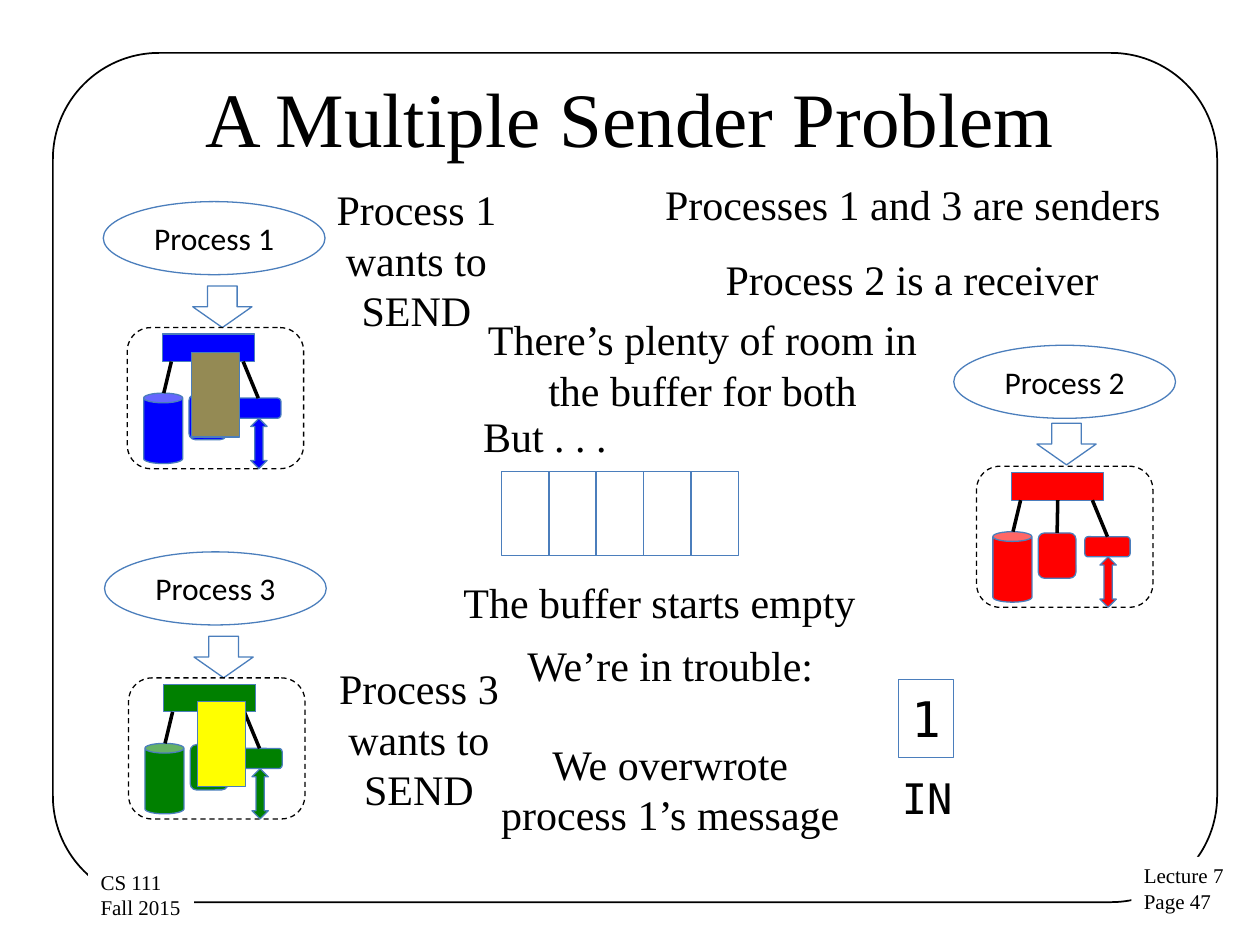
from lxml import etree
from pptx import Presentation
from pptx.dml.color import RGBColor
from pptx.enum.dml import MSO_LINE
from pptx.enum.shapes import MSO_CONNECTOR, MSO_SHAPE
from pptx.enum.text import MSO_ANCHOR, MSO_AUTO_SIZE, PP_ALIGN
from pptx.oxml.ns import qn
from pptx.util import Inches, Pt

RECT = MSO_SHAPE.RECTANGLE
ROUNDED = MSO_SHAPE.ROUNDED_RECTANGLE
LEFT, CENTER = PP_ALIGN.LEFT, PP_ALIGN.CENTER
TOP, MIDDLE = MSO_ANCHOR.TOP, MSO_ANCHOR.MIDDLE
TITLE_ONLY = 5
BOTTOM_SIDE, TOP_SIDE = 2, 0


def color(value):
    return RGBColor.from_string(value)


class SlideBuilder:
    serif, sans, mono = "Times New Roman", "Calibri", "DejaVu Sans Mono"
    black, white, outline = "000000", "FFFFFF", "4B7EBC"

    def __init__(self, slide):
        self.slide = slide

    def set_text(self, shape, text, size, font, align=CENTER, anchor=MIDDLE, wrap=True):
        frame = shape.text_frame
        frame.text = text
        frame.word_wrap = wrap
        frame.vertical_anchor = anchor
        for para in frame.paragraphs:
            para.alignment = align
            for span in para.runs:
                span.font.size = Pt(size)
                span.font.name = font
                span.font.color.rgb = color(self.black)

    def title(self, text, *place):
        title = self.slide.shapes.title
        title.left, title.top, title.width, title.height = map(Inches, place)
        self.set_text(title, text, 44, self.serif)

    def shape(self, kind, left, top, width, height, fill=None, line=outline,
              weight=0.75, group=None):
        owner = group or self.slide
        shape = owner.shapes.add_shape(kind, *map(Inches, (left, top, width, height)))
        shape.shadow.inherit = False
        if fill:
            shape.fill.solid()
            shape.fill.fore_color.rgb = color(fill)
        else:
            shape.fill.background()
        if line:
            shape.line.color.rgb = color(line)
            shape.line.width = Pt(weight)
        else:
            shape.line.fill.background()
        return shape

    def text(self, text, left, top, width, height, align=CENTER, wrap=True, font=serif):
        box = self.slide.shapes.add_textbox(*map(Inches, (left, top, width, height)))
        self.set_text(box, text, 24, font, align, TOP, wrap)
        box.text_frame.auto_size = MSO_AUTO_SIZE.SHAPE_TO_FIT_TEXT

    def line(self, *ends):
        line = self.slide.shapes.add_connector(MSO_CONNECTOR.STRAIGHT, *map(Inches, ends))
        line.line.color.rgb = color(self.black)
        line.line.width = Pt(2)
        etree.SubElement(line.element.spPr, qn("a:effectLst"))
        return line

    def frame(self):
        frame = self.shape(ROUNDED, 0.42, 0.42, 9.24, 6.74, line=self.black, weight=1)
        frame.adjustments[0] = 0.125

    def footer(self, text, left, top):
        box = self.shape(RECT, left, top, 0.84, 0.51, self.white, None)
        self.set_text(box, text, 12, self.serif, LEFT, TOP, False)

    def buffer(self, left, top, count, step):
        group = self.slide.shapes.add_group_shape()
        for index in range(count):
            self.shape(RECT, left + index * step, top, 0.38, 0.67, group=group)

    def message(self, left, top, fill):
        self.shape(RECT, left, top, 0.38, 0.67, fill)

    def process(self, name, bubble, arrow, machine, fill, show_memory_link=False):
        """Draw a named bubble and an arrow down to its dashed machine box."""
        x, y = machine
        ellipse = self.shape(MSO_SHAPE.OVAL, *bubble, 1.76, 0.58)
        self.set_text(ellipse, name, 18, self.sans)
        self.shape(MSO_SHAPE.DOWN_ARROW, *arrow, 0.47, 0.33, self.white)

        bus = self.shape(RECT, x + 0.28, y + 0.05, 0.73, 0.22, fill)
        memory = self.shape(ROUNDED, x + 0.49, y + 0.53, 0.3, 0.36, fill)
        # The box stands upright and is turned a quarter, about its centre.
        box = self.shape(ROUNDED, x + 0.14, y - 0.14, 1.12, 1.4, line=self.black)
        box.rotation = 90
        box.line.dash_style = MSO_LINE.DASH
        self.shape(MSO_SHAPE.CAN, x + 0.13, y + 0.52, 0.31, 0.56, fill)
        network = self.slide.shapes.add_group_shape()
        card = self.shape(ROUNDED, x + 0.86, y + 0.56, 0.36, 0.16, fill, group=network)
        self.shape(MSO_SHAPE.UP_DOWN_ARROW, x + 0.98, y + 0.72, 0.13, 0.4, fill,
                   group=network)

        self.line(x + 0.35, y + 0.27, x + 0.29, y + 0.52)
        card_link = self.line(x + 0.92, y + 0.27, x + 1.04, y + 0.56)
        card_link.end_connect(card, TOP_SIDE)
        if show_memory_link:
            memory_link = self.line(x + 0.64, y + 0.27, x + 0.64, y + 0.53)
            memory_link.begin_connect(bus, BOTTOM_SIDE)
            memory_link.end_connect(memory, TOP_SIDE)


def main():
    deck = Presentation()
    deck.slide_width, deck.slide_height = Inches(10), Inches(7.5)
    page = SlideBuilder(deck.slides.add_slide(deck.slide_layouts[TITLE_ONLY]))

    page.frame()
    page.footer("Lecture 7\nPage 47", 8.98, 6.8)
    page.footer("CS 111\nFall 2015", 0.7, 6.85)
    page.title("A Multiple Sender Problem", 0.5, 0.3, 9, 1.25)

    page.process("Process 1", (0.82, 1.6), (1.53, 2.27), (1.01, 2.6), "0000FF")
    page.process("Process 2", (7.57, 2.74), (8.23, 3.36), (7.75, 3.7), "FF0000", True)
    page.process("Process 3", (0.83, 4.38), (1.54, 5.05), (1.02, 5.38), "008000")
    page.buffer(3.98, 3.74, 5, 0.375)
    page.message(1.52, 2.8, "948A54")
    page.message(1.57, 5.57, "FFFF00")

    for text, *place in (
        ("Processes 1 and 3 are senders", 5.18, 1.37, 4.17, 0.5),
        ("Process 2 is a receiver", 5.66, 1.96, 3.19, 0.5),
        ("The buffer starts empty", 3.58, 4.53, 3.35, 0.5),
    ):
        page.text(text, *place, align=LEFT, wrap=False)
    for text, *place in (
        ("Process 1 wants to SEND", 2.4, 1.41, 1.81, 1.31),
        ("Process 3 wants to SEND", 2.42, 5.21, 1.81, 1.31),
        ("There’s plenty of room in the buffer for both", 3.58, 2.44, 3.99, 0.91),
        ("But . . .", 2.33, 3.21, 3.99, 0.5),
        ("We’re in trouble:", 3.98, 5.03, 2.68, 0.5),
        ("We overwrote process 1’s message", 3.84, 5.81, 2.96, 0.91),
    ):
        page.text(text, *place)

    page.text("IN", 7.06, 6.08, 0.61, 0.5, align=LEFT, wrap=False, font=page.mono)
    pointer = page.shape(RECT, 7.13, 5.39, 0.44, 0.62, page.white)
    page.set_text(pointer, "1", 28, page.mono)

    deck.save("out.pptx")


if __name__ == "__main__":
    main()
